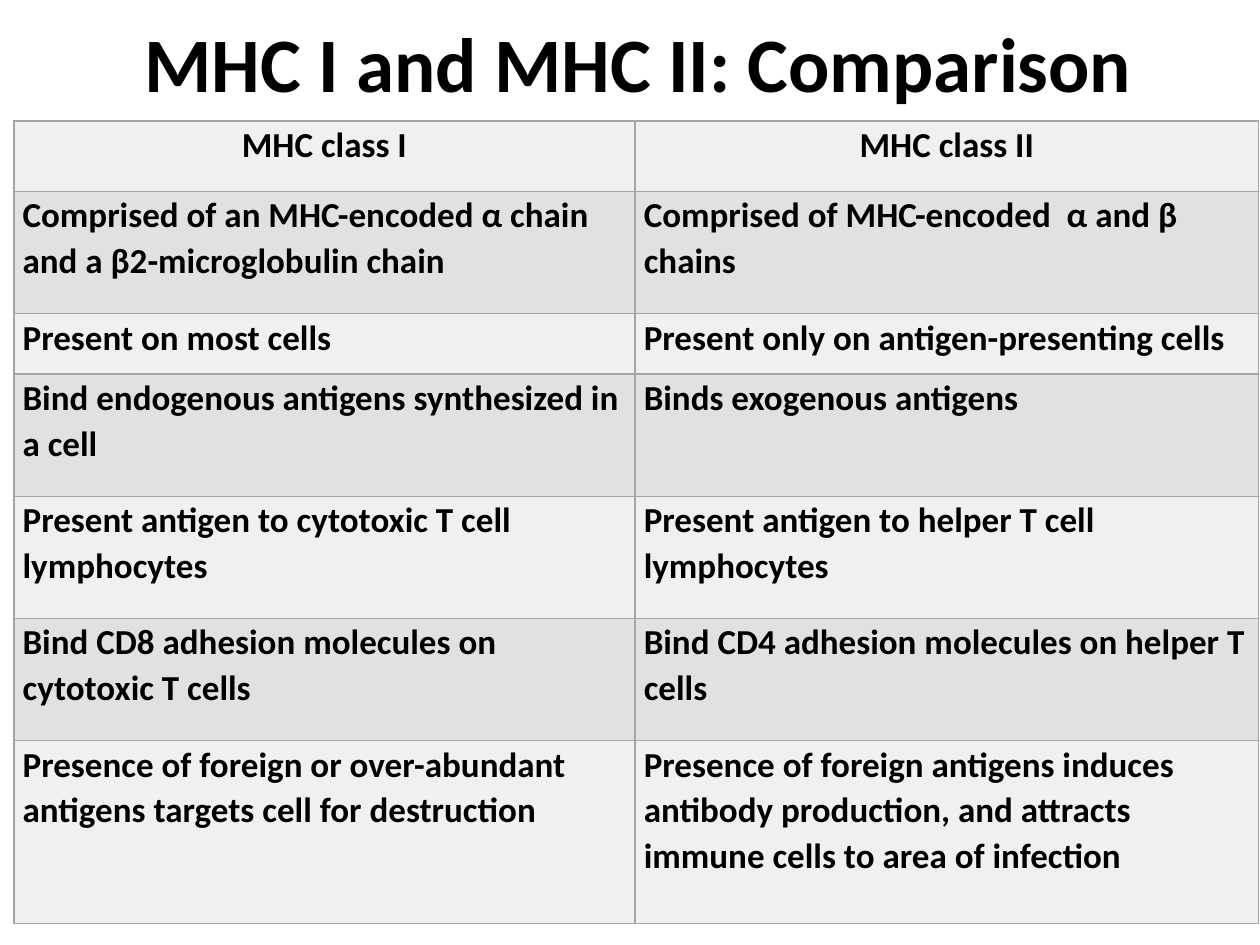
"""Build a slide that compares MHC class I and MHC class II in a table."""

from typing import NamedTuple

from lxml.etree import SubElement
from pptx import Presentation
from pptx.dml.color import RGBColor
from pptx.enum.text import MSO_ANCHOR as Anchor, PP_ALIGN as Align
from pptx.oxml.ns import qn
from pptx.util import Inches, Pt

COLORS = {"text": "000000", "border": "A5A5A5", "light": "F0F0F0", "dark": "E1E1E1"}
FONT = "Calibri"
COLUMN_WIDTHS = (4.93, 4.95)


class Comparison(NamedTuple):
    class_one: str
    class_two: str
    height: float


COMPARISONS = [
    Comparison("MHC class I", "MHC class II", 0.56),
    Comparison(
        "Comprised of an MHC-encoded α chain and a β2-microglobulin chain",
        "Comprised of MHC-encoded  α and β chains",
        0.97,
    ),
    Comparison("Present on most cells", "Present only on antigen-presenting cells", 0.48),
    Comparison("Bind endogenous antigens synthesized in a cell", "Binds exogenous antigens", 0.97),
    Comparison(
        "Present antigen to cytotoxic T cell lymphocytes",
        "Present antigen to helper T cell lymphocytes",
        0.97,
    ),
    Comparison(
        "Bind CD8 adhesion molecules on cytotoxic T cells",
        "Bind CD4 adhesion molecules on helper T cells",
        0.97,
    ),
    Comparison(
        "Presence of foreign or over-abundant antigens targets cell for destruction",
        "Presence of foreign antigens induces antibody production, "
        "and attracts immune cells to area of infection",
        1.45,
    ),
]


def write_text(frame, text: str, *, size: float, align: Align, spacing: float, after: float = 0) -> None:
    para = frame.paragraphs[0]
    para.alignment = align
    para.line_spacing = spacing
    para.space_before = Pt(0)
    para.space_after = Pt(after)
    span = para.add_run()
    span.text = text
    span.font.name = FONT
    span.font.size = Pt(size)
    span.font.bold = True
    span.font.color.rgb = RGBColor.from_string(COLORS["text"])


def add_borders(cell, color: str, width: float) -> None:
    properties = cell._tc.get_or_add_tcPr()
    for side in ("a:lnL", "a:lnR", "a:lnT", "a:lnB"):
        line = SubElement(properties, qn(side), w=str(Pt(width)))
        fill = SubElement(line, qn("a:solidFill"))
        SubElement(fill, qn("a:srgbClr"), val=color)


def format_cell(cell, text: str, fill: str, align: Align) -> None:
    cell.margin_left = cell.margin_right = Inches(0.07)
    cell.margin_top = cell.margin_bottom = 0
    cell.vertical_anchor = Anchor.TOP
    add_borders(cell, COLORS["border"], 1)
    cell.fill.solid()
    cell.fill.fore_color.rgb = RGBColor.from_string(fill)
    write_text(cell.text_frame, text, size=20, align=align, spacing=1.07, after=8)


def add_title(page, text: str) -> None:
    title = page.shapes.title
    title.left, title.top = Inches(0.14), 0
    title.width, title.height = Inches(9.86), Inches(1.08)
    title.text_frame.vertical_anchor = Anchor.MIDDLE
    write_text(title.text_frame, text, size=44, align=Align.CENTER, spacing=0.9)


def add_comparison_table(page, comparisons: list[Comparison]) -> None:
    height = sum(comparison.height for comparison in comparisons)
    table = page.shapes.add_table(
        len(comparisons), len(COLUMN_WIDTHS),
        Inches(0.11), Inches(0.96), Inches(sum(COLUMN_WIDTHS)), Inches(height),
    ).table
    for column, width in zip(table.columns, COLUMN_WIDTHS):
        column.width = Inches(width)
    for index, (row, comparison) in enumerate(zip(table.rows, comparisons)):
        row.height = Inches(comparison.height)
        fill = COLORS["dark" if index % 2 else "light"]
        align = Align.LEFT if index else Align.CENTER
        for cell, text in zip(row.cells, (comparison.class_one, comparison.class_two)):
            format_cell(cell, text, fill, align)


def main() -> None:
    deck = Presentation()
    deck.slide_width, deck.slide_height = Inches(10), Inches(7.5)
    page = deck.slides.add_slide(deck.slide_layouts.get_by_name("Title Only"))
    add_title(page, "MHC I and MHC II: Comparison")
    add_comparison_table(page, COMPARISONS)
    deck.save("out.pptx")


if __name__ == "__main__":
    main()
